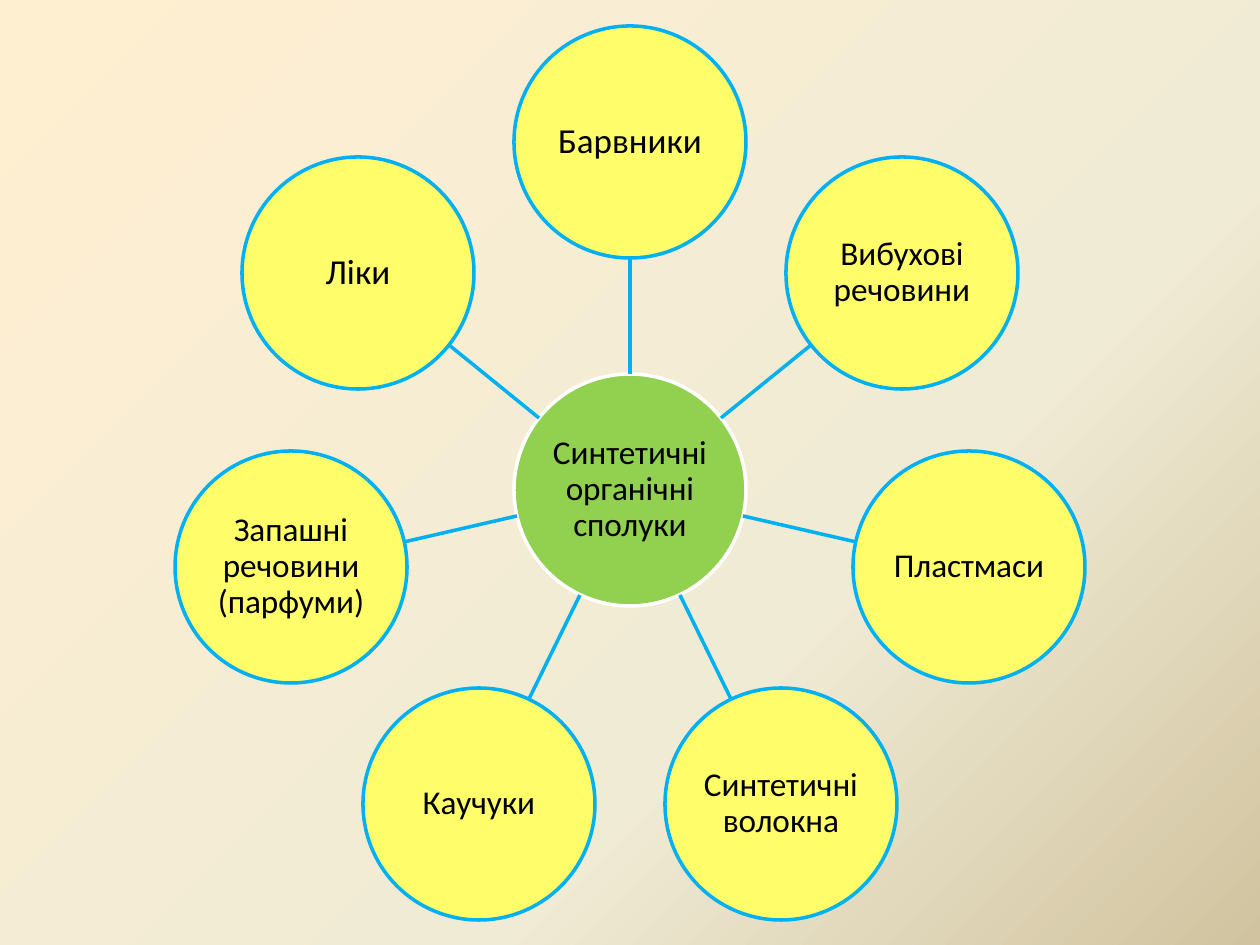
import copy
import dataclasses
import math

import pptx
import pptx.dml.color
import pptx.enum.shapes
import pptx.enum.text
import pptx.oxml.ns
import pptx.util

PX = 914400 // 126
CENTRE = (630, 490)
RADIUS = 116
ORBIT = 348
HUB = "Синтетичні органічні сполуки"


@dataclasses.dataclass(frozen=True)
class Theme:
    """Colours, font and sizes of the slide."""
    font: str = "Calibri"
    text: str = "000000"
    hub: str = "92D050"
    hub_line: str = "FFFFFF"
    satellite: str = "FFFE6A"
    accent: str = "00B0F0"
    line_width: int = 2
    large: int = 20
    normal: int = 19
    backdrop: tuple = ((0, "FFEFD1"), (0.65, "F0EBD5"), (1, "D1C39F"))


THEME = Theme()
SATELLITES = (
    ("Барвники", THEME.large),
    ("Вибухові речовини", THEME.normal),
    ("Пластмаси", THEME.normal),
    ("Синтетичні волокна", THEME.normal),
    ("Каучуки", THEME.normal),
    ("Запашні речовини (парфуми)", THEME.normal),
    ("Ліки", THEME.large),
)


def rgb(value):
    """Return a colour from its hex digits."""
    return pptx.dml.color.RGBColor.from_string(value)


def polar(angle, distance):
    """Return the point at a clockwise angle from the top of the centre."""
    return (round(CENTRE[0] + distance * math.sin(angle)),
            round(CENTRE[1] - distance * math.cos(angle)))


def paint_background(page):
    """Fill the page with a diagonal gradient of three stops."""
    fill = page.background.fill
    fill.gradient()
    fill.gradient_angle = 315
    stop_list = page._element.find(".//" + pptx.oxml.ns.qn("a:gsLst"))
    stop_list.append(copy.deepcopy(stop_list[-1]))
    for stop, (position, colour) in zip(fill.gradient_stops, THEME.backdrop):
        stop.position = position
        stop.color.rgb = rgb(colour)


def style_line(line, colour):
    """Give a line its colour and the common width."""
    line.color.rgb = rgb(colour)
    line.width = pptx.util.Pt(THEME.line_width)


def add_circle(page, centre, text, size, fill, outline):
    """Add a circle with centred text."""
    left, top = (value - RADIUS for value in centre)
    circle = page.shapes.add_shape(
        pptx.enum.shapes.MSO_SHAPE.OVAL,
        left * PX, top * PX, 2 * RADIUS * PX, 2 * RADIUS * PX)
    circle.shadow.inherit = False
    circle.fill.solid()
    circle.fill.fore_color.rgb = rgb(fill)
    style_line(circle.line, outline)
    frame = circle.text_frame
    frame.text = text
    frame.word_wrap = True
    frame.vertical_anchor = pptx.enum.text.MSO_ANCHOR.MIDDLE
    frame.margin_left = frame.margin_right = PX
    frame.margin_top = frame.margin_bottom = PX
    para = frame.paragraphs[0]
    para.alignment = pptx.enum.text.PP_ALIGN.CENTER
    para.line_spacing = 0.9
    font = para.runs[0].font
    font.name = THEME.font
    font.size = pptx.util.Pt(size)
    font.color.rgb = rgb(THEME.text)


def add_spoke(page, angle):
    """Add the line from the hub to the satellite at an angle."""
    start = polar(angle, RADIUS)
    end = polar(angle, ORBIT - RADIUS)
    spoke = page.shapes.add_connector(
        pptx.enum.shapes.MSO_CONNECTOR.STRAIGHT,
        *(value * PX for value in start + end))
    style_line(spoke.line, THEME.accent)
    properties = spoke._element.spPr
    properties.append(pptx.oxml.parse_xml(
        "<a:effectLst %s/>" % pptx.oxml.ns.nsdecls("a")))


def main():
    """Build the radial diagram and save the deck."""
    deck = pptx.Presentation()
    deck.slide_width = pptx.util.Inches(10)
    deck.slide_height = pptx.util.Inches(7.5)
    page = deck.slides.add_slide(deck.slide_layouts[6])
    paint_background(page)
    add_circle(page, CENTRE, HUB, THEME.normal, THEME.hub, THEME.hub_line)
    for index, (text, size) in enumerate(SATELLITES):
        angle = math.tau * index / len(SATELLITES)
        add_spoke(page, angle)
        add_circle(page, polar(angle, ORBIT), text, size,
                   THEME.satellite, THEME.accent)
    deck.save("out.pptx")


if __name__ == "__main__":
    main()
